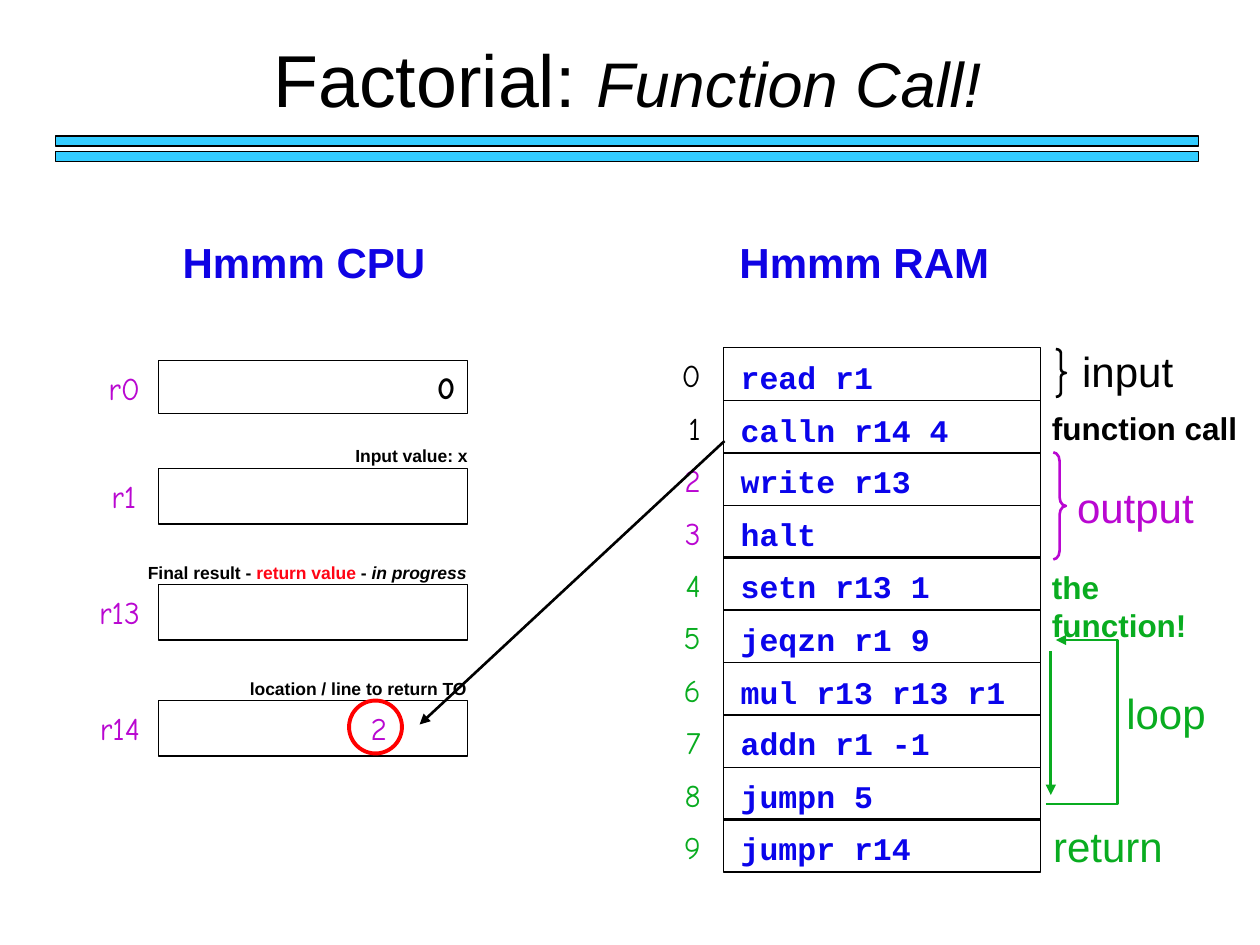
from dataclasses import dataclass

from pptx import Presentation
from pptx.dml.color import RGBColor
from pptx.enum.shapes import MSO_CONNECTOR as Conn, MSO_SHAPE as Geo
from pptx.enum.text import MSO_ANCHOR as Anchor, PP_ALIGN as Align
from pptx.oxml.ns import qn
from pptx.util import Pt
from lxml.etree import SubElement

PX = 9144
BLACK, PURPLE, GREEN = "000000", "B907D1", "09AC20"
BLUE, NAVY, RED, CYAN = "0A04EB", "0F02E4", "FF0515", "33CCFF"
SANS, COMIC, MONO = "Arial", "Comic Neue", "Courier New"


@dataclass
class Run:
    text: str
    color: str = BLACK
    size: int = 10
    font: str = SANS
    bold: bool = False
    slant: bool = False


@dataclass
class Reg:
    name: str
    left: int
    top: int
    high: int = 44


@dataclass
class Line:
    code: str
    color: str


@dataclass
class Label:
    box: tuple[int, int, int, int]
    runs: list[Run]
    align: Align = Align.LEFT


def paint(fmt, color: str) -> None:
    fmt.rgb = RGBColor.from_string(color)


def write(frame, runs: list[Run], align: Align) -> None:
    para = frame.paragraphs[0]
    para.alignment = align
    for item in runs:
        run = para.add_run()
        run.text = item.text
        font = run.font
        font.name, font.size = item.font, Pt(item.size)
        font.bold, font.italic = item.bold, item.slant
        paint(font.color, item.color)


def label(item: Label) -> None:
    frame = shapes.add_textbox(*(n * PX for n in item.box)).text_frame
    frame.word_wrap = True
    write(frame, item.runs, item.align)


def style(shape, color: str, width: float, fill: str = "") -> None:
    shape.shadow.inherit = False
    if fill:
        shape.fill.solid()
        paint(shape.fill.fore_color, fill)
    else:
        shape.fill.background()
    stroke(shape, color, width)


def stroke(shape, color: str, width: float) -> None:
    shape.line.width = Pt(width)
    paint(shape.line.color, color)


def draw(geo: Geo, box: tuple[int, int, int, int], color: str = BLACK,
         width: float = 0.75, fill: str = ""):
    shape = shapes.add_shape(geo, *(n * PX for n in box))
    style(shape, color, width, fill)
    return shape


def brace(box: tuple[int, int, int, int], color: str, curve: float) -> None:
    shape = draw(Geo.RIGHT_BRACE, box, color, 1.5)
    shape.adjustments[0] = curve


def tip(shape) -> None:
    SubElement(shape.line._get_or_add_ln(), qn("a:tailEnd"), type="triangle")


def arrow(start: tuple[int, int], end: tuple[int, int], color: str) -> None:
    ends = (n * PX for n in start + end)
    line = shapes.add_connector(Conn.STRAIGHT, *ends)
    stroke(line, color, 1.5)
    tip(line)
    SubElement(line._element.spPr, qn("a:effectLst"))


def path(points: list[tuple[int, int]], color: str) -> None:
    pen = shapes.build_freeform(*points[0], scale=PX)
    pen.add_line_segments(points[1:], close=False)
    shape = pen.convert_to_shape()
    style(shape, color, 1.5)
    tip(shape)


REGS = [Reg("r0", 53, 286, 42), Reg("r1", 50, 372),
        Reg("r13", 53, 464), Reg("r14", 53, 556)]

LINES = [
    Line("read r1", BLACK), Line("calln r14 4", BLACK),
    Line("write r13", PURPLE), Line("halt", PURPLE),
    Line("setn r13 1", GREEN), Line("jeqzn r1 9", GREEN),
    Line("mul r13 r13 r1", GREEN), Line("addn r1 -1", GREEN),
    Line("jumpn 5", GREEN), Line("jumpr r14", GREEN),
]

LABELS = [
    Label((135, 183, 225, 50), [Run("Hmmm CPU", NAVY, 24, bold=True)]),
    Label((577, 183, 229, 50), [Run("Hmmm RAM", NAVY, 24, bold=True)]),
    Label((304, 287, 67, 40), [Run("0", BLACK, 18, COMIC, True)], Align.RIGHT),
    Label((250, 558, 67, 40), [Run("2", PURPLE, 18, COMIC)], Align.RIGHT),
    Label((185, 348, 196, 27), [Run("Input value: x", bold=True)], Align.RIGHT),
    Label((94, 441, 286, 27),
          [Run("Final result - ", bold=True),
           Run("return value", RED, bold=True),
           Run(" - ", bold=True),
           Run("in progress", bold=True, slant=True)], Align.RIGHT),
    Label((184, 533, 196, 27),
          [Run("location / line to return TO", bold=True)], Align.RIGHT),
    Label((849, 269, 99, 50), [Run("input", BLACK, 24)]),
    Label((825, 320, 171, 40), [Run("function call", BLACK, 18, bold=True)]),
    Label((845, 377, 113, 50), [Run("output", PURPLE, 24)]),
    Label((825, 446, 171, 40), [Run("the function!", GREEN, 18, bold=True)]),
    Label((884, 541, 99, 50), [Run("loop", GREEN, 24)]),
    Label((826, 646, 121, 50), [Run("return", GREEN, 24)]),
]

deck = Presentation()
deck.slide_width, deck.slide_height = 1000 * PX, 750 * PX
slide = deck.slides.add_slide(deck.slide_layouts[5])
shapes = slide.shapes

for top in (108, 120):
    draw(Geo.RECTANGLE, (44, top, 907, 8), fill=CYAN)

title = shapes.title
title.left, title.top, title.width, title.height = (
    n * PX for n in (79, 22, 838, 80))
title.text_frame.vertical_anchor = Anchor.MIDDLE
write(title.text_frame, [Run("Factorial: ", size=42),
                         Run("Function Call!", size=36, slant=True)],
      Align.CENTER)

for reg in REGS:
    draw(Geo.RECTANGLE, (126, reg.top, 245, reg.high))
    label(Label((reg.left, reg.top + 2, 68, 40),
                [Run(reg.name, PURPLE, 18, COMIC)], Align.RIGHT))

for num, row in enumerate(LINES):
    top = round(276 + 41.6 * num)
    draw(Geo.RECTANGLE, (574, top, 252, 42))
    label(Label((499, top + 2, 67, 40),
                [Run(str(num), row.color, 18, COMIC)], Align.RIGHT))
    label(Label((578, top + 3, 245, 40),
                [Run(row.code, BLUE, 18, MONO, True)]))

for item in LABELS:
    label(item)

brace((838, 277, 8, 38), BLACK, 0.39)
brace((836, 359, 10, 85), PURPLE, 0.69)
path([(830, 638), (887, 638), (887, 508), (838, 508)], GREEN)
arrow((834, 517), (834, 631), GREEN)
arrow((575, 350), (333, 575), BLACK)
draw(Geo.OVAL, (277, 556, 42, 42), "FF0000", 2.25)

deck.save("out.pptx")
